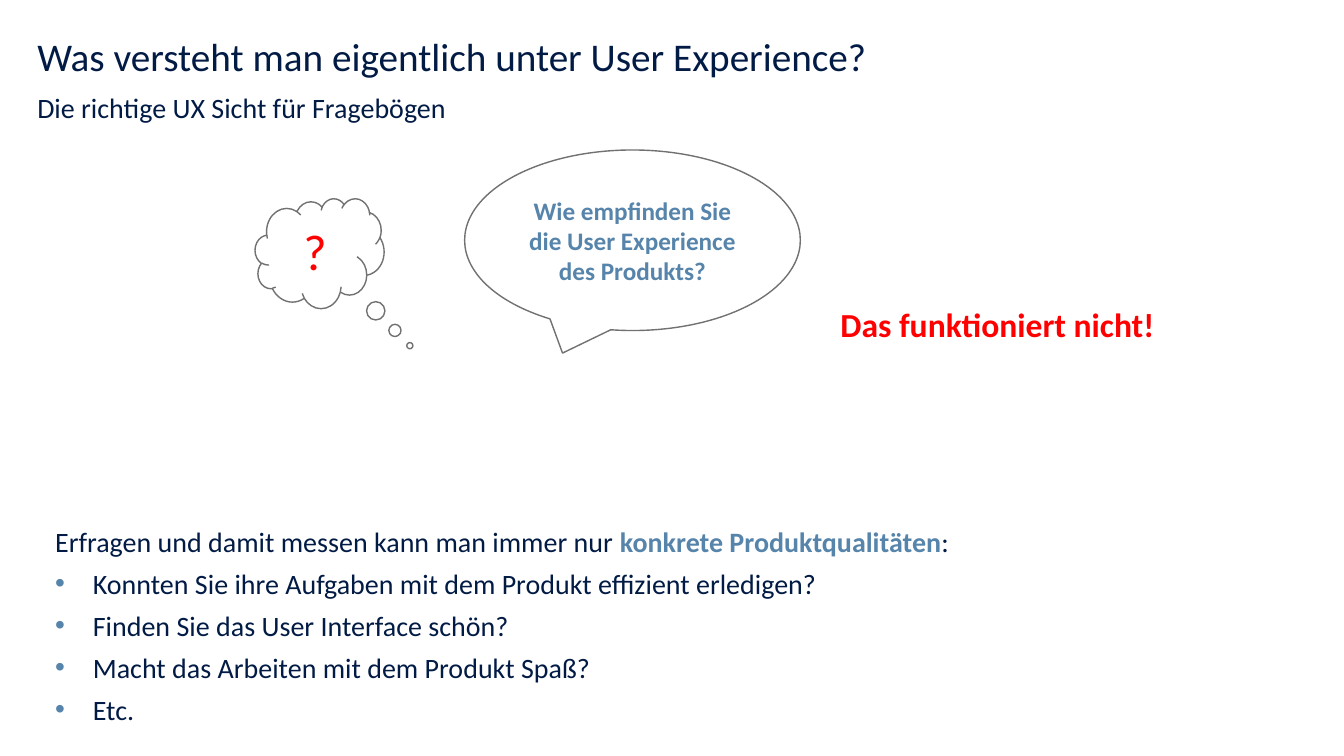
import pptx
import pptx.util
from lxml import etree
from pptx.dml.color import RGBColor
from pptx.enum.shapes import MSO_SHAPE
from pptx.enum.text import MSO_ANCHOR, PP_ALIGN
from pptx.oxml.ns import qn
from pptx.util import Cm

COLORS = {
    "navy": "021B45",
    "accent": "5684AA",
    "alert": "FF0000",
    "outline": "717171",
    "white": "FFFFFF",
}
FONT = "Calibri"
MARGIN = 0.94
CONTENT_WIDTH = 32

QUESTIONS = [
    "Konnten Sie ihre Aufgaben mit dem Produkt effizient erledigen?",
    "Finden Sie das User Interface schön?",
    "Macht das Arbeiten mit dem Produkt Spaß?",
    "Etc.",
]


def rgb(color):
    return RGBColor.from_string(COLORS[color])


def style_runs(paragraph, size, color, bold=False):
    for run in paragraph.runs:
        run.font.name = FONT
        run.font.size = pptx.util.Pt(size)
        run.font.bold = bold
        run.font.color.rgb = rgb(color)


def add_text(slide, box, text, size, color="navy", bold=False, inset=True):
    frame = slide.shapes.add_textbox(*map(Cm, box)).text_frame
    frame.word_wrap = True
    if not inset:
        frame.margin_left = frame.margin_right = 0
        frame.margin_top = frame.margin_bottom = 0
    frame.text = text
    style_runs(frame.paragraphs[0], size, color, bold)
    return frame


def add_bullet(frame, text):
    paragraph = frame.add_paragraph()
    paragraph.text = text
    paragraph.space_before = pptx.util.Pt(6)
    properties = paragraph._p.get_or_add_pPr()
    properties.set("marL", str(Cm(0.95)))
    properties.set("indent", str(-Cm(0.95)))
    bullet_color = etree.SubElement(properties, qn("a:buClr"))
    etree.SubElement(bullet_color, qn("a:srgbClr"), val=COLORS["accent"])
    etree.SubElement(properties, qn("a:buFont"), typeface="Arial")
    etree.SubElement(properties, qn("a:buChar"), char="•")
    style_runs(paragraph, 20, "navy")


def add_callout(slide, kind, box, text, size, color, bold=False):
    callout = slide.shapes.add_shape(kind, *map(Cm, box))
    callout.shadow.inherit = False
    callout.fill.solid()
    callout.fill.fore_color.rgb = rgb("white")
    callout.line.color.rgb = rgb("outline")
    callout.line.width = pptx.util.Pt(1)
    frame = callout.text_frame
    frame.word_wrap = True
    frame.vertical_anchor = MSO_ANCHOR.MIDDLE
    frame.text = text
    frame.paragraphs[0].alignment = PP_ALIGN.CENTER
    style_runs(frame.paragraphs[0], size, color, bold)
    return callout


def add_conclusion(slide):
    conclusion = add_text(
        slide, (1.14, 13.08, CONTENT_WIDTH, 5.97),
        "Erfragen und damit messen kann man immer nur ", 20)
    lead = conclusion.paragraphs[0]
    lead.add_run().text = "konkrete Produktqualitäten"
    lead.add_run().text = ":"
    style_runs(lead, 20, "navy")
    emphasis = lead.runs[1].font
    emphasis.bold = True
    emphasis.color.rgb = rgb("accent")
    for question in QUESTIONS:
        add_bullet(conclusion, question)


def main():
    deck = pptx.Presentation()
    deck.slide_width, deck.slide_height = Cm(33.87), Cm(19.05)
    slide = deck.slides.add_slide(deck.slide_layouts[6])

    title = add_text(slide, (MARGIN, 0.84, CONTENT_WIDTH, 1.27),
                     "Was versteht man eigentlich unter User Experience?",
                     28, inset=False)
    title.vertical_anchor = MSO_ANCHOR.MIDDLE
    title.paragraphs[0].line_spacing = 0.9
    add_text(slide, (MARGIN, 2.29, CONTENT_WIDTH, 0.84),
             "Die richtige UX Sicht für Fragebögen", 20, inset=False)

    add_conclusion(slide)

    thought = add_callout(slide, MSO_SHAPE.CLOUD_CALLOUT,
                          (6.43, 5, 3.25, 2.77), "?", 36, "alert")
    thought.adjustments[0] = 0.7
    thought.adjustments[1] = 0.84
    add_callout(slide, MSO_SHAPE.OVAL_CALLOUT, (11.71, 3.78, 8.46, 4.55),
                "Wie empfinden Sie die User Experience des Produkts?",
                18, "accent", bold=True)
    add_text(slide, (20.93, 7.54, 8.74, 1.27), "Das funktioniert nicht!",
             24, "alert", bold=True)

    deck.save("out.pptx")


if __name__ == "__main__":
    main()
